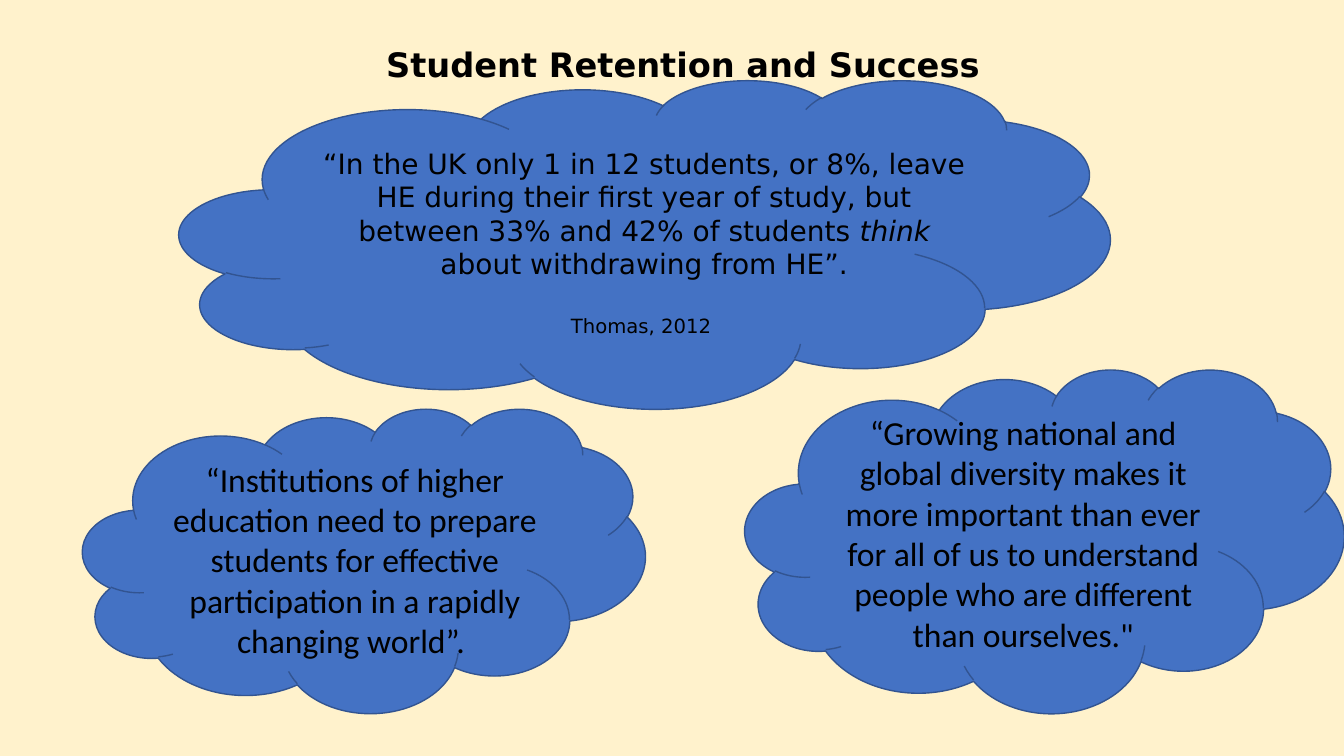
"""Build the student retention slide with three quote clouds."""
from pptx import Presentation
from pptx.dml.color import RGBColor
from pptx.enum.shapes import MSO_SHAPE
from pptx.enum.text import MSO_ANCHOR, MSO_AUTO_SIZE, PP_ALIGN
from pptx.util import Pt

PX = 9144
SIZE = (1333, 750)
PAPER, BLUE, EDGE, INK = "FFF2CC", "4472C4", "325491", "000000"
SANS, BODY = "DejaVu Sans", "Calibri"

TITLE = ("Student Retention and Success", {"name": SANS, "size": Pt(24), "bold": True})
TITLE_BOX = (373, 43, 612, 77)

QUOTE = {"name": BODY, "size": Pt(24)}
STAT = {"name": SANS, "size": Pt(20)}
CITE = {"name": SANS, "size": Pt(14)}

CLOUDS = [
    {"cloud": (82, 405, 558, 302), "box": (157, 450, 390, 212), "paras": [
        (0, [("“Institutions of higher education need to prepare students for "
              "effective participation in a rapidly changing world”. ", QUOTE)])]},
    {"cloud": (739, 366, 594, 341), "box": None, "paras": [
        (0, [("“Growing national and global diversity makes it more important than "
              "ever for all of us to understand people who are different than "
              "ourselves.\"", QUOTE)])]},
    {"cloud": (178, 79, 923, 326), "box": (309, 140, 660, 202), "paras": [
        (0, [("“In the UK only 1 in 12 students, or 8%, leave HE during their first "
              "year of study, but between 33% and 42% of students ", STAT),
             ("think", {**STAT, "italic": True}),
             (" about withdrawing from HE”.", STAT)]),
        (24, [("Thomas, 2012 ", CITE)])]},
]


def color(code):
    return RGBColor.from_string(code)


def scale(box):
    return [n * PX for n in box]


def style(item, form):
    for key, value in form.items():
        setattr(item, key, value)


def add_run(para, text, form):
    run = para.add_run()
    run.text = text
    style(run.font, form)
    run.font.color.rgb = color(INK)


def add_title(slide):
    title = slide.shapes.title
    style(title, dict(zip(("left", "top", "width", "height"), scale(TITLE_BOX))))
    style(title.text_frame, {"word_wrap": True, "auto_size": MSO_AUTO_SIZE.NONE,
                             "vertical_anchor": MSO_ANCHOR.TOP})
    para = title.text_frame.paragraphs[0]
    style(para, {"alignment": PP_ALIGN.LEFT, "line_spacing": 0.9, "space_before": Pt(0),
                 "space_after": Pt(6)})
    add_run(para, *TITLE)


def add_cloud(slide, cloud, box, paras):
    shape = slide.shapes.add_shape(MSO_SHAPE.CLOUD, *scale(cloud))
    shape.shadow.inherit = False
    shape.fill.solid()
    shape.fill.fore_color.rgb = color(BLUE)
    shape.line.color.rgb = color(EDGE)
    shape.line.width = Pt(1)
    holder = slide.shapes.add_textbox(*scale(box)) if box else shape
    frame = holder.text_frame
    style(frame, {"word_wrap": True,
                  "vertical_anchor": MSO_ANCHOR.TOP if box else MSO_ANCHOR.MIDDLE})
    for i, (gap, runs) in enumerate(paras):
        para = frame.add_paragraph() if i else frame.paragraphs[0]
        style(para, {"alignment": PP_ALIGN.CENTER, "space_before": Pt(gap)})
        for text, form in runs:
            add_run(para, text, form)


def main():
    deck = Presentation()
    deck.slide_width, deck.slide_height = scale(SIZE)
    slide = deck.slides.add_slide(deck.slide_layouts[5])
    slide.background.fill.solid()
    slide.background.fill.fore_color.rgb = color(PAPER)
    add_title(slide)
    for item in CLOUDS:
        add_cloud(slide, **item)
    deck.save("out.pptx")


if __name__ == "__main__":
    main()
